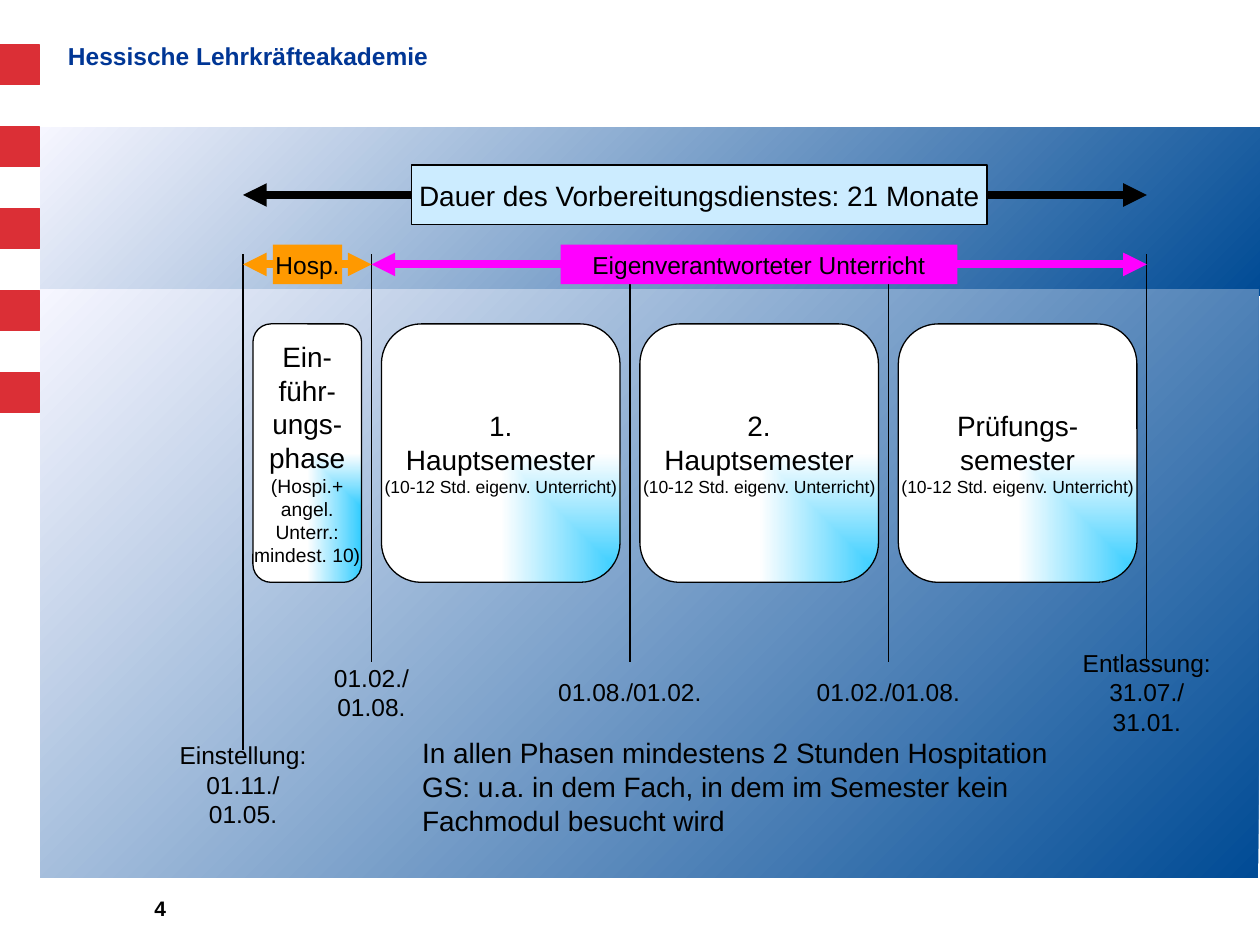
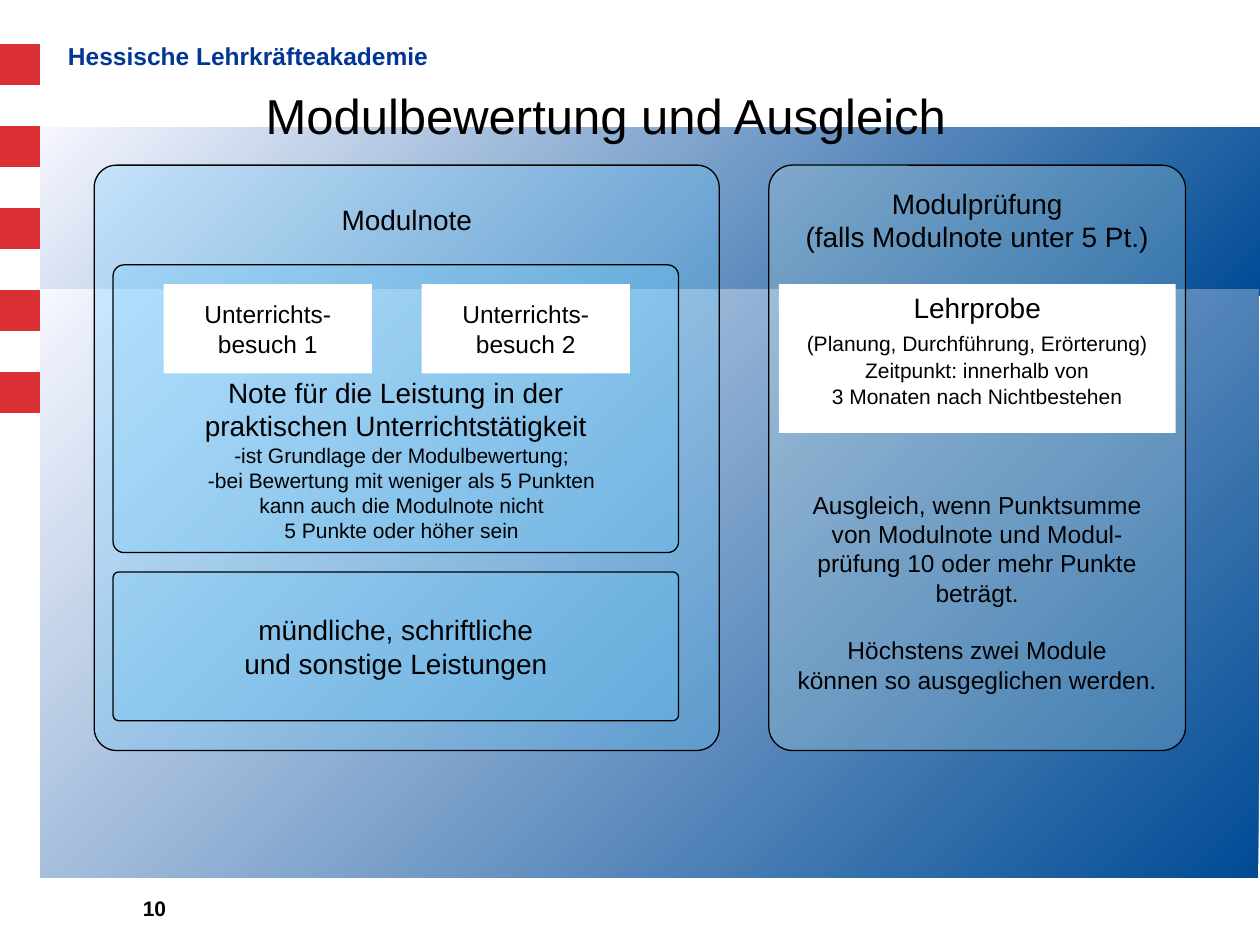
from itertools import pairwise

from lxml.etree import SubElement
from pptx import Presentation
from pptx.dml.color import RGBColor
from pptx.enum.shapes import MSO_CONNECTOR, MSO_SHAPE
from pptx.enum.text import MSO_ANCHOR as Anchor, MSO_AUTO_SIZE as AutoSize, PP_ALIGN as Align
from pptx.oxml.ns import qn
from pptx.util import Cm, Pt

BLACK, WHITE, RED, NAVY = "000000", "FFFFFF", "DB2F36", "003695"
BAND_GRADIENT = ("004B95", "F6F6FF")
PHASE_GRADIENT = ("33CCFF", WHITE)
SKY, ICE, TEAL = "66CCFF", "CCECFF", "BBE0E3"
ORANGE, MAGENTA = "FF9900", "FF00FF"
FONT = "Arial"
TITLE_ONLY, BLANK = 5, 6


def color(value):
    """Turn a hex string into a colour."""
    return RGBColor.from_string(value)


def apply(target, **values):
    """Set each given value on the target."""
    for name, value in values.items():
        setattr(target, name, value)


def write(shape, paragraphs, size=16, align=Align.CENTER, ink=BLACK, bold=False, **frame_format):
    """Write paragraphs, each a string or (text, size, space before)."""
    frame = shape.text_frame
    defaults = dict(word_wrap=False, vertical_anchor=Anchor.MIDDLE, auto_size=AutoSize.NONE)
    apply(frame, **(defaults | frame_format))
    for index, item in enumerate(paragraphs):
        text, points, gap = (item, size, 0) if isinstance(item, str) else item
        paragraph = frame.paragraphs[0] if index == 0 else frame.add_paragraph()
        apply(paragraph, alignment=align, space_before=Pt(gap))
        run = paragraph.add_run()
        run.text = text
        apply(run.font, name=FONT, size=Pt(points), bold=bold)
        run.font.color.rgb = color(ink)


def add_text(slide, box, paragraphs, **text_format):
    """Add a text box; the box is left, top, width, height in cm."""
    shape = slide.shapes.add_textbox(*map(Cm, box))
    write(shape, paragraphs, **text_format)
    return shape


def add_box(slide, box, fill=None, line=None, radius=None, opacity=None):
    """Add a plain or rounded rectangle."""
    kind = MSO_SHAPE.RECTANGLE if radius is None else MSO_SHAPE.ROUNDED_RECTANGLE
    shape = slide.shapes.add_shape(kind, *map(Cm, box))
    shape.shadow.inherit = False
    if radius is not None:
        shape.adjustments[0] = radius
    if fill:
        shape.fill.solid()
        shape.fill.fore_color.rgb = color(fill)
    if opacity:
        tint = shape.element.spPr.find(f"{qn('a:solidFill')}/{qn('a:srgbClr')}")
        SubElement(tint, qn("a:alpha"), val=str(opacity * 1000))
    if line:
        shape.line.color.rgb = color(line)
        shape.line.width = Pt(0.75)
    else:
        shape.line.fill.background()
    return shape


def fill_gradient(shape, colors, from_corner=False):
    """Fill with two colours, from the lower right corner to the upper left."""
    shape.fill.gradient()
    shape.fill.gradient_angle = 135
    for position, (stop, value) in enumerate(zip(shape.fill.gradient_stops, colors)):
        stop.position = position
        stop.color.rgb = color(value)
    if from_corner:
        gradient = shape.element.spPr.find(qn("a:gradFill"))
        gradient.remove(gradient.find(qn("a:lin")))
        course = SubElement(gradient, qn("a:path"), path="rect")
        SubElement(course, qn("a:fillToRect"), l="100000", t="100000")


def add_line(slide, start, end, ink=BLACK, width=0.75, arrows=False):
    """Add a straight line between two points, with arrowheads if wanted."""
    line = slide.shapes.add_connector(MSO_CONNECTOR.STRAIGHT, *map(Cm, start + end))
    line.line.color.rgb = color(ink)
    line.line.width = Pt(width)
    properties = line.element.spPr
    if arrows:
        for tag in ("a:headEnd", "a:tailEnd"):
            SubElement(properties.find(qn("a:ln")), qn(tag), type="triangle")
    SubElement(properties, qn("a:effectLst"))


def add_frame(slide, number):
    """Draw the blue bands, red squares, header and page number."""
    for band in ((0.81, 2.57, 24.59, 3.4), (0.81, 5.84, 24.56, 11.86)):
        fill_gradient(add_box(slide, band), BAND_GRADIENT)
    for row in range(5):
        add_box(slide, (0, 0.91 + 1.65 * row, 0.8, 0.8), RED, RED)
    header = add_text(slide, (1.37, 0.76, 20.4, 0.79), ["Hessische Lehrkräfteakademie"],
                      size=14, align=Align.LEFT, ink=NAVY, bold=True, word_wrap=True,
                      vertical_anchor=Anchor.TOP, margin_left=0, margin_right=0)
    header.text_frame.paragraphs[0].line_spacing = 0.9
    add_text(slide, (1.52, 17.93, 1.96, 0.84), [str(number)], size=12, align=Align.RIGHT,
             bold=True, word_wrap=True, vertical_anchor=Anchor.TOP, margin_right=Cm(0.13))


def add_span(slide, start, end, middle, label_box, label, ink, fill, size=14, line=None):
    """Draw a double arrow with its label."""
    add_line(slide, (start, middle), (end, middle), ink, 4.5, arrows=True)
    left, width, height = label_box
    shape = add_box(slide, (left, middle - height / 2, width, height), fill, line)
    write(shape, [label], size=size)


def add_phases(slide, top, height, milestones):
    """Place one phase box between each pair of neighbouring milestones."""
    hours = ("(10-12 Std. eigenv. Unterricht)", 10, 0)
    notes = ("(Hospi.+", "angel.", "Unterr.:", "mindest. 10)")
    phases = [
        ["Ein-", "führ-", "ungs-", "phase", *((note, 11, 0) for note in notes)],
        ["1.", "Hauptsemester", hours],
        ["2.", "Hauptsemester", hours],
        ["Prüfungs-", "semester", hours],
    ]
    margin = 0.2
    for (start, end), phase in zip(pairwise(milestones), phases):
        shape = add_box(slide, (start + margin, top, end - start - 2 * margin, height),
                        line=BLACK, radius=0.167)
        fill_gradient(shape, PHASE_GRADIENT, from_corner=True)
        write(shape, phase)


def add_dates(slide, top, milestones):
    """Drop a line from each milestone to its date."""
    dates = [
        ["Einstellung:", "01.11./", "01.05."],
        ["01.02./", "01.08."],
        ["01.08./01.02."],
        ["01.02./01.08."],
        ["Entlassung:", "31.07./", "31.01."],
    ]
    width, height = 3.2, 1.8
    for index, (x, date) in enumerate(zip(milestones, dates)):
        bottom = top + (8.21 if index else 9.98)
        add_line(slide, (x, top), (x, bottom))
        label_top = bottom - (0.29 if index else 0.2)
        add_text(slide, (x - width / 2, label_top, width, height), date, size=14)


def build_timeline(presentation):
    """Build the slide with the phases of the training period."""
    slide = presentation.slides.add_slide(presentation.slide_layouts[BLANK])
    add_frame(slide, 4)
    milestones = [4.9] + [7.49 + 5.21 * step for step in range(4)]
    first, second, last = milestones[0], milestones[1], milestones[-1]
    add_dates(slide, 5.13, milestones)
    add_phases(slide, 6.53, 5.21, milestones)
    add_span(slide, first, last, 3.93, (8.3, 11.6, 1.2),
             "Dauer des Vorbereitungsdienstes: 21 Monate", BLACK, ICE, 16, BLACK)
    add_span(slide, second, last, 5.33, (11.3, 8, 0.8),
             "Eigenverantworteter Unterricht", MAGENTA, MAGENTA)
    add_span(slide, first, second, 5.33, (5.5, 1.4, 0.8), "Hosp.", ORANGE, ORANGE)
    add_text(slide, (8.26, 14.71, 14.1, 2.31),
             ["In allen Phasen mindestens 2 Stunden Hospitation GS: u.a. in dem Fach, "
              "in dem im Semester kein Fachmodul besucht wird"],
             align=Align.LEFT, word_wrap=True, vertical_anchor=Anchor.TOP)


def add_panel(slide, box, fill, radius, heading):
    """Draw a translucent panel with a heading along its top."""
    left, top, width, _ = box
    add_box(slide, box, fill, BLACK, radius, opacity=25)
    add_text(slide, (left + 0.2, top + 0.2, width - 0.4, 1.8), heading)


def add_grade_panel(slide, box):
    """Fill the panel on the module grade."""
    left, top, _, _ = box
    add_panel(slide, box, SKY, 0.038, ["Modulnote"])
    parts = [
        (2.01, 5.8, ["Note für die Leistung in der", "praktischen Unterrichtstätigkeit"]),
        (8.2, 3, ["mündliche, schriftliche", "und sonstige Leistungen"]),
    ]
    for offset, height, lines in parts:
        part = add_box(slide, (left + 0.38, top + offset, 11.4, height), SKY, BLACK, 0.038, 25)
        write(part, lines)
    for visit in (1, 2):
        shape = add_box(slide, (left + 1.4 + 5.2 * (visit - 1), top + 2.4, 4.2, 1.8), WHITE)
        write(shape, [f"Unterrichts-besuch {visit}"], size=14, word_wrap=True)
    add_text(slide, (left + 1, top + 5.4, 10.4, 2.4),
             ["-ist Grundlage der Modulbewertung;", "-bei Bewertung mit weniger als 5 Punkten",
              "kann auch die Modulnote nicht", "5 Punkte oder höher sein"], size=12)


def add_exam_panel(slide, box):
    """Fill the panel on the module exam."""
    left, top, width, _ = box
    add_panel(slide, box, TEAL, 0.057, ["Modulprüfung", "(falls Modulnote unter 5 Pt.)"])
    inner_left, inner_width = left + 0.2, width - 0.4
    lesson = add_box(slide, (inner_left, top + 2.4, inner_width, 3), WHITE)
    write(lesson, ["Lehrprobe", ("(Planung, Durchführung, Erörterung)", 12, 4),
                   ("Zeitpunkt: innerhalb von", 12, 1), ("3 Monaten nach Nichtbestehen", 12, 0)],
          word_wrap=True, vertical_anchor=Anchor.TOP)
    add_text(slide, (inner_left, top + 6.6, inner_width, 4),
             ["Ausgleich, wenn Punktsumme", "von Modulnote und Modul-",
              "prüfung 10 oder mehr Punkte", "beträgt.",
              ("Höchstens zwei Module", 14, 16), "können so ausgeglichen werden."], size=14)


def build_grading(presentation):
    """Build the slide on module grades and compensation."""
    slide = presentation.slides.add_slide(presentation.slide_layouts[TITLE_ONLY])
    add_frame(slide, 10)
    title = slide.shapes.title
    slide.shapes.element.append(title.element)
    apply(title, left=Cm(5.1), top=Cm(1.6), width=Cm(14.5), height=Cm(1.45))
    write(title, ["Modulbewertung und Ausgleich"], size=28, align=Align.LEFT,
          word_wrap=True, vertical_anchor=Anchor.TOP)
    add_grade_panel(slide, (1.9, 3.33, 12.6, 11.8))
    add_exam_panel(slide, (15.5, 3.33, 8.4, 11.8))


def main():
    """Build and save the presentation."""
    presentation = Presentation()
    apply(presentation, slide_width=Cm(25.4), slide_height=Cm(19.05))
    build_timeline(presentation)
    build_grading(presentation)
    presentation.save("out.pptx")


if __name__ == "__main__":
    main()
